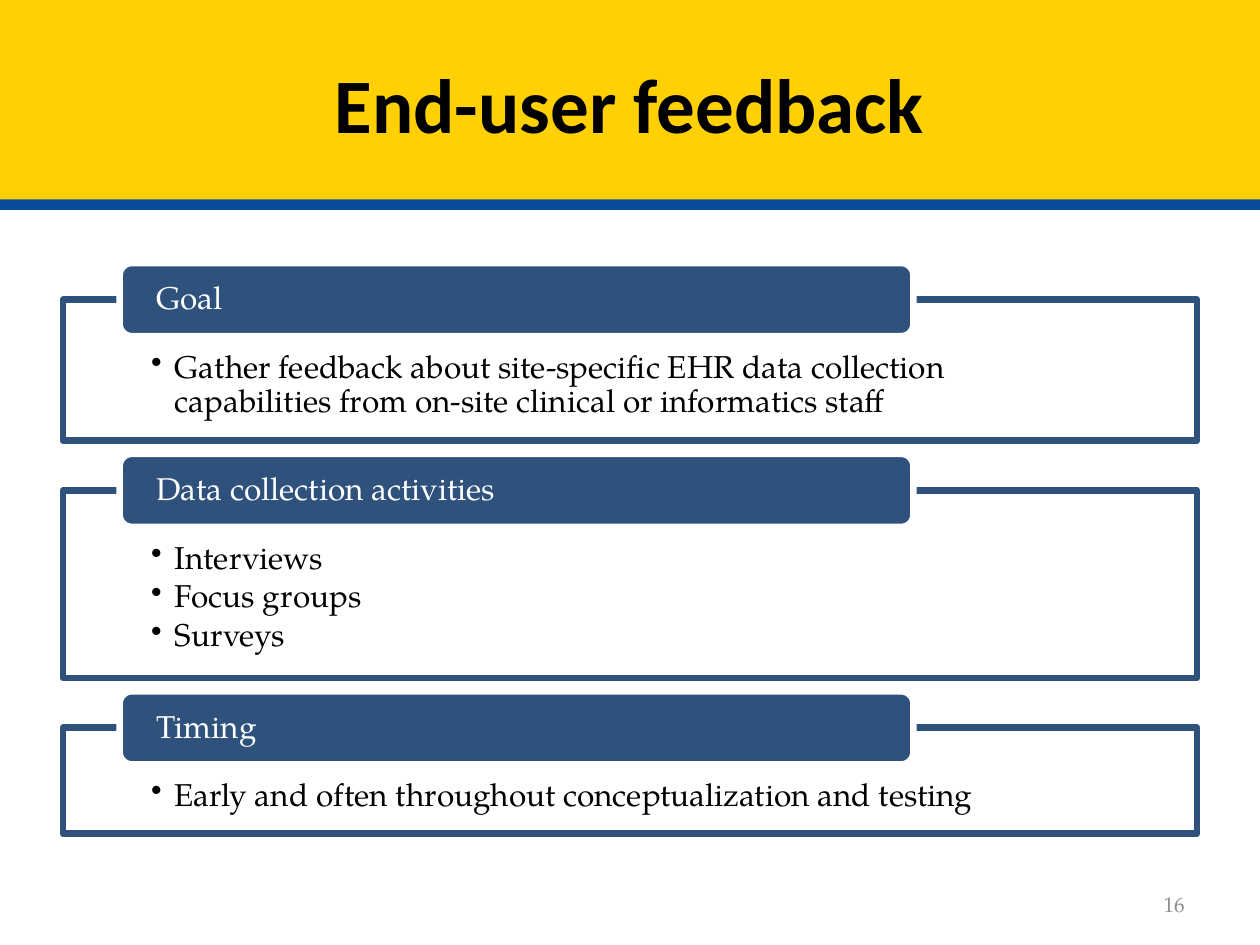
from pptx import Presentation
from pptx.dml.color import RGBColor
from pptx.enum.shapes import MSO_SHAPE as SHAPE
from pptx.enum.text import MSO_ANCHOR as ANCHOR, PP_ALIGN as ALIGN
from pptx.oxml import parse_xml
from pptx.oxml.ns import nsdecls
from pptx.util import Pt

COLORS = {"yellow": "FFD004", "blue": "084A9C", "navy": "2F527D",
          "white": "FFFFFF", "black": "000000", "gray": "8C8C8C"}
SERIF = "TeX Gyre Pagella"
SECTIONS = [
    ("Goal", 80.6, ["Gather feedback about site-specific EHR data collection "
                    "capabilities from on-site clinical or informatics staff"]),
    ("Data collection activities", 107.3, ["Interviews", "Focus groups", "Surveys"]),
    ("Timing", 60.5, ["Early and often throughout conceptualization and testing"]),
]
SECTION_GAP = 28.4


def rgb(name):
    """Return the named colour."""
    return RGBColor.from_string(COLORS[name])


def add_box(s, kind, box, fill, line=None):
    """Add a filled shape, outlined if a line colour is given."""
    sp = s.shapes.add_shape(kind, *map(Pt, box))
    sp.shadow.inherit = False
    sp.fill.solid()
    sp.fill.fore_color.rgb = rgb(fill)
    if line:
        sp.line.color.rgb = rgb(line)
        sp.line.width = Pt(3.78)
    else:
        sp.line.fill.background()
    return sp


def set_text(sp, lines, color, size=18, font=SERIF, bold=False, align=ALIGN.LEFT,
             anchor=ANCHOR.MIDDLE, margins=(7.2, 3.6), spacing=1.0, after=0, bullet=False):
    """Write one paragraph per line with a shared format."""
    tf = sp.text_frame
    side, top = map(Pt, margins)
    frame = {"word_wrap": True, "vertical_anchor": anchor, "margin_left": side,
             "margin_right": side, "margin_top": top, "margin_bottom": Pt(0)}
    for name, value in frame.items():
        setattr(tf, name, value)
    for i, line in enumerate(lines):
        p = tf.add_paragraph() if i else tf.paragraphs[0]
        for name, value in {"alignment": align, "line_spacing": spacing,
                            "space_after": Pt(after)}.items():
            setattr(p, name, value)
        if bullet:
            pPr = p._p.get_or_add_pPr()
            pPr.set("marL", str(Pt(13.5)))
            pPr.set("indent", str(Pt(-13.5)))
            pPr.append(parse_xml(f'<a:buChar {nsdecls("a")} char="•"/>'))
        r = p.add_run()
        r.text = line
        for name, value in {"name": font, "size": Pt(size), "bold": bold}.items():
            setattr(r.font, name, value)
        r.font.color.rgb = rgb(color)


def add_header(s, x, y, w, h, title):
    """Draw the title band with the blue strip below it."""
    add_box(s, SHAPE.RECTANGLE, (x, y + 6, w, h), "blue")
    band = add_box(s, SHAPE.RECTANGLE, (x, y, w, h), "yellow")
    set_text(band, [title], "black", size=44, font="Calibri", bold=True, align=ALIGN.CENTER)


def add_section(s, x, y, w, h, heading, bullets):
    """Draw an outlined bullet box with a heading tab over its top edge."""
    body = add_box(s, SHAPE.RECTANGLE, (x, y, w, h), "white", "navy")
    set_text(body, bullets, "black", anchor=ANCHOR.TOP, margins=(50.4, 29.5),
             spacing=0.9, after=2.7, bullet=True)
    tab = add_box(s, SHAPE.ROUNDED_RECTANGLE, (x + w * 0.05, y - 20.9, w * 0.7, 41.8),
                  "navy", "white")
    set_text(tab, [heading], "white", margins=(19, 0), spacing=0.9)


def add_page_number(s, x, y, w, h, number):
    """Write the page number at the right of its box."""
    sp = s.shapes.add_textbox(*map(Pt, (x, y, w, h)))
    set_text(sp, [number], "gray", size=12, align=ALIGN.RIGHT)


def main():
    """Build and save the slide."""
    prs = Presentation()
    prs.slide_width, prs.slide_height = Pt(720), Pt(540)
    s = prs.slides.add_slide(prs.slide_layouts[6])
    add_header(s, 0, 0, 720, 114, "End-user feedback")
    y = 171.2
    for heading, h, bullets in SECTIONS:
        add_section(s, 36, y, 648, h, heading, bullets)
        y += h + SECTION_GAP
    add_page_number(s, 516, 500.5, 168, 28.8, "16")
    prs.save("out.pptx")


if __name__ == "__main__":
    main()
